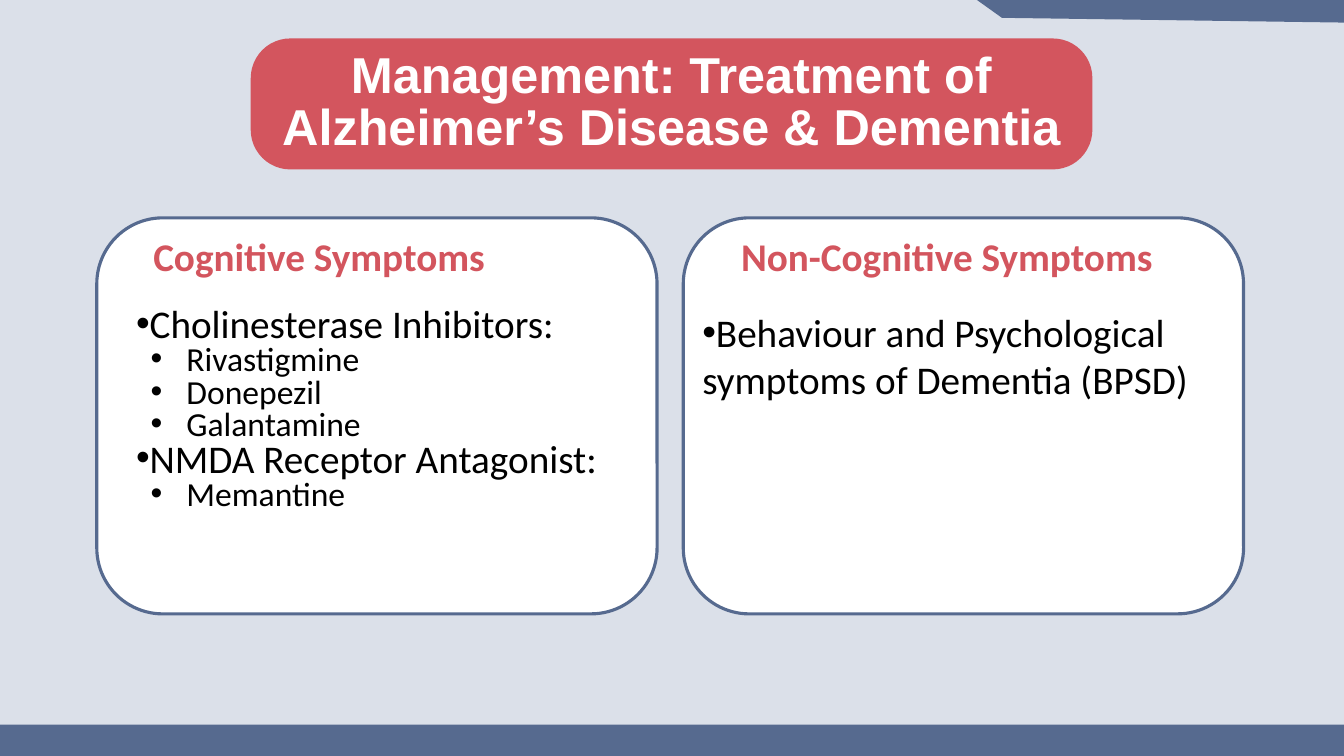
from lxml.etree import SubElement
from pptx import Presentation
from pptx.dml.color import RGBColor
from pptx.enum.shapes import MSO_SHAPE
from pptx.enum.text import MSO_ANCHOR, PP_ALIGN
from pptx.oxml.ns import qn
from pptx.util import Cm, Pt

WIDE, HIGH = 33.87, 19.05
COLORS = {"back": "DBE0E9", "blue": "566A8F", "red": "D3555E",
          "white": "FFFFFF", "black": "000000"}


def color(name):
    return RGBColor.from_string(COLORS[name])


def paint(shape, fill, line=None):
    shape.shadow.inherit = False
    shape.fill.solid()
    shape.fill.fore_color.rgb = color(fill)
    if line:
        shape.line.color.rgb = color(line)
        shape.line.width = Pt(2.25)
    else:
        shape.line.fill.background()


def block(slide, kind, box, fill, line=None):
    shape = slide.shapes.add_shape(kind, *map(Cm, box))
    paint(shape, fill, line)
    return shape


def write(par, text, size=28, tint="black", font="Calibri", bold=False,
          align=PP_ALIGN.LEFT, lead=0.9, level=0, bullet=False):
    """Fill a paragraph; level 1 bullets hang, level 0 bullets sit inline."""
    par.level = level
    if bullet:
        props = par._p.get_or_add_pPr()
        props.set("marL", str(Cm(1.27 * level)))
        props.set("indent", str(Cm(-0.9 * level)))
        SubElement(props, qn("a:buFont"), typeface="Arial")
        SubElement(props, qn("a:buChar"), char="•")
    par.alignment = align
    par.line_spacing = lead
    par.space_before = Pt(0)
    run = par.add_run()
    run.text = text
    run.font.size = Pt(size)
    run.font.name = font
    run.font.bold = bold
    run.font.color.rgb = color(tint)


def frame(slide, box):
    text = slide.shapes.add_textbox(*map(Cm, box)).text_frame
    text.word_wrap = True
    return text


def backdrop(slide, box):
    x, y, w, h = box
    block(slide, MSO_SHAPE.RECTANGLE, box, "back")
    block(slide, MSO_SHAPE.RECTANGLE, (x, y + h - 0.79, w, 0.79), "blue")
    right = x + w
    edge = slide.shapes.build_freeform(Cm(right - 9.25), Cm(y))
    edge.add_line_segments([(Cm(right), Cm(y)), (Cm(right), Cm(y + 0.57)),
                            (Cm(right - 8.62), Cm(y + 0.45))])
    paint(edge.convert_to_shape(), "blue")


def title(slide, box, text):
    shape = block(slide, MSO_SHAPE.ROUNDED_RECTANGLE, box, "red")
    shape.adjustments[0] = 0.302
    area = shape.text_frame
    area.word_wrap = True
    area.vertical_anchor = MSO_ANCHOR.MIDDLE
    write(area.paragraphs[0], text, size=36, tint="white", font="Arial",
          bold=True, align=PP_ALIGN.CENTER, lead=0.85)


def panel(slide, box, head, items, head_dx, list_dx, list_h, lead):
    """Draw a card with a centred heading and (level, text) bullets."""
    x, y, _, _ = box
    wide = 14.96
    block(slide, MSO_SHAPE.ROUNDED_RECTANGLE, box, "white", "blue")
    body = frame(slide, (x + list_dx, y + 2.16, wide, list_h))
    for i, (level, text) in enumerate(items):
        par = body.add_paragraph() if i else body.paragraphs[0]
        write(par, text, size=28 - 4 * level, lead=lead, level=level,
              bullet=True)
    label = frame(slide, (x + head_dx, y + 0.38, wide, 1.78))
    write(label.paragraphs[0], head, tint="red", bold=True,
          align=PP_ALIGN.CENTER)


def main():
    deck = Presentation()
    deck.slide_width, deck.slide_height = Cm(WIDE), Cm(HIGH)
    slide = deck.slides.add_slide(deck.slide_layouts[6])
    backdrop(slide, (0, 0, WIDE, HIGH))
    top, wide, high = 5.49, 14.12, 9.98
    panel(slide, (17.22, top, wide, high), "Non-Cognitive Symptoms",
          [(0, "Behaviour and Psychological symptoms of Dementia (BPSD)")],
          head_dx=-0.84, list_dx=0.23, list_h=3.3, lead=1.0)
    panel(slide, (2.44, top, wide, high), "Cognitive Symptoms",
          [(0, "Cholinesterase Inhibitors:"), (1, "Rivastigmine"),
           (1, "Donepezil"), (1, "Galantamine"),
           (0, "NMDA Receptor Antagonist:"), (1, "Memantine")],
          head_dx=-1.88, list_dx=0.74, list_h=6.6, lead=0.8)
    title(slide, (6.32, 0.97, 21.21, 3.3),
          "Management: Treatment of Alzheimer’s Disease & Dementia")
    deck.save("out.pptx")


if __name__ == "__main__":
    main()
